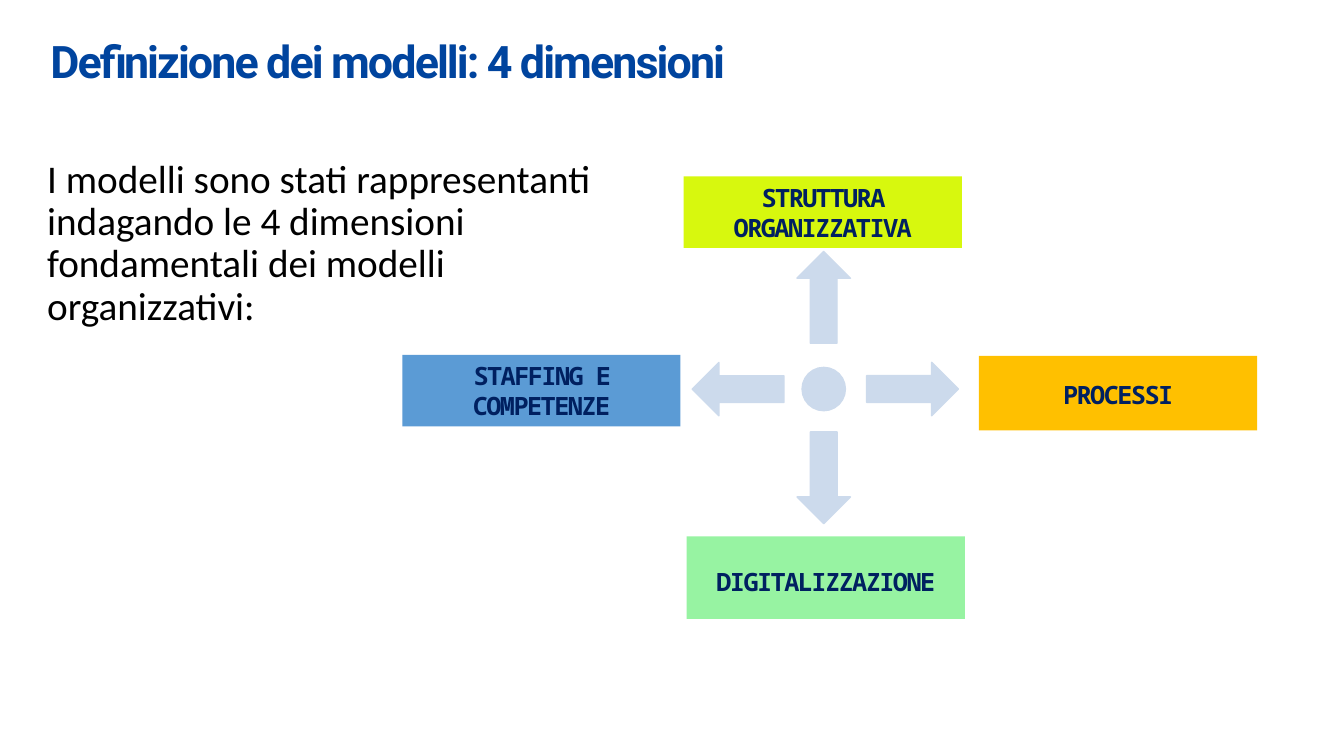
import math

from pptx import Presentation
from pptx import util as u
from pptx.dml.color import RGBColor
from pptx.enum import shapes, text

PX = 9144  # EMU per px, 100 px to the inch
COLORS = {
    "title": "00449E", "body": "000000", "label": "002060", "arrow": "CCDAEC",
    "structure": "D7F80E", "staffing": "5B9BD5",
    "process": "FFC000", "digital": "97F3A2",
}
HUB = (817, 386)
HUB_SIZE = 43
ARROW_SIZE = (53, 91)
ARROWS = [(0, 91), (90, 88), (180, 88), (270, 85)]  # angle, distance from hub

# wording, colour, left, top, height, extra space above the text
DIMENSIONS = [
    ("DIGITALIZZAZIONE", "digital", 681, 532, 82, 8),
    ("PROCESSI", "process", 971, 353, 74, 2),
    ("STRUTTURA ORGANIZZATIVA", "structure", 678, 175, 71, 0),
    ("STAFFING E COMPETENZE", "staffing", 399, 352, 71, 0),
]
DIMENSION_WIDTH = 276


def px(*lengths):
    return [u.Emu(round(length * PX)) for length in lengths]


def rgb(name):
    return RGBColor.from_string(COLORS[name])


def write(box, wording, font, size, color, bold=False, tracking=0,
          align=text.PP_ALIGN.LEFT, anchor=text.MSO_ANCHOR.MIDDLE):
    frame = box.text_frame
    frame.text = wording
    frame.word_wrap = True
    frame.auto_size = text.MSO_AUTO_SIZE.NONE
    frame.vertical_anchor = anchor
    para = frame.paragraphs[0]
    para.alignment = align
    span = para.runs[0]
    span.font.name = font
    span.font.size = u.Pt(size)
    span.font.bold = bold
    span.font.color.rgb = rgb(color)
    if tracking:
        span._r.get_or_add_rPr().set("spc", str(round(tracking * 100)))
    return para


def add_title(page, wording):
    title = page.shapes.title
    title.left, title.top, title.width, title.height = px(40, 20, 1254, 80)
    write(title, wording, "Roboto", 32, "title", bold=True, tracking=-1.4)


def add_intro(page, wording):
    box = page.shapes.add_textbox(*px(37, 153, 573, 201))
    para = write(box, wording, "Calibri", 28, "body", anchor=text.MSO_ANCHOR.TOP)
    para.line_spacing = 0.9


def add_filled(page, kind, color, left, top, width, height):
    shape = page.shapes.add_shape(kind, *px(left, top, width, height))
    shape.shadow.inherit = False
    shape.fill.solid()
    shape.fill.fore_color.rgb = rgb(color)
    shape.line.fill.background()
    return shape


def add_compass_part(page, kind, center, width, height, angle=0):
    x, y = center
    part = add_filled(page, kind, "arrow", x - width / 2, y - height / 2, width, height)
    part.line.color.rgb = rgb("arrow")
    part.line.width = u.Pt(1)
    part.rotation = angle


def add_compass(page):
    add_compass_part(page, shapes.MSO_SHAPE.OVAL, HUB, HUB_SIZE, HUB_SIZE)
    for angle, reach in ARROWS:
        turn = math.radians(angle)
        center = (HUB[0] + reach * math.sin(turn), HUB[1] - reach * math.cos(turn))
        add_compass_part(page, shapes.MSO_SHAPE.UP_ARROW, center, *ARROW_SIZE, angle)


def add_dimension(page, wording, color, left, top, height, drop):
    box = add_filled(page, shapes.MSO_SHAPE.RECTANGLE, color,
                     left, top, DIMENSION_WIDTH, height)
    write(box, wording, "Noto Sans Mono", 18, "label", bold=True, tracking=-1.1,
          align=text.PP_ALIGN.CENTER)
    box.text_frame.margin_top = px(5 + drop)[0]


def main():
    deck = Presentation()
    deck.slide_width, deck.slide_height = px(1333, 750)
    page = deck.slides.add_slide(deck.slide_layouts[5])

    # Heading and introduction
    add_title(page, "Definizione dei modelli: 4 dimensioni")
    add_intro(page, "I modelli sono stati rappresentanti indagando le 4 dimensioni "
                    "fondamentali dei modelli organizzativi:")

    # Hub with arrows to the four dimensions
    add_compass(page)
    for dimension in DIMENSIONS:
        add_dimension(page, *dimension)

    deck.save("out.pptx")


if __name__ == "__main__":
    main()
